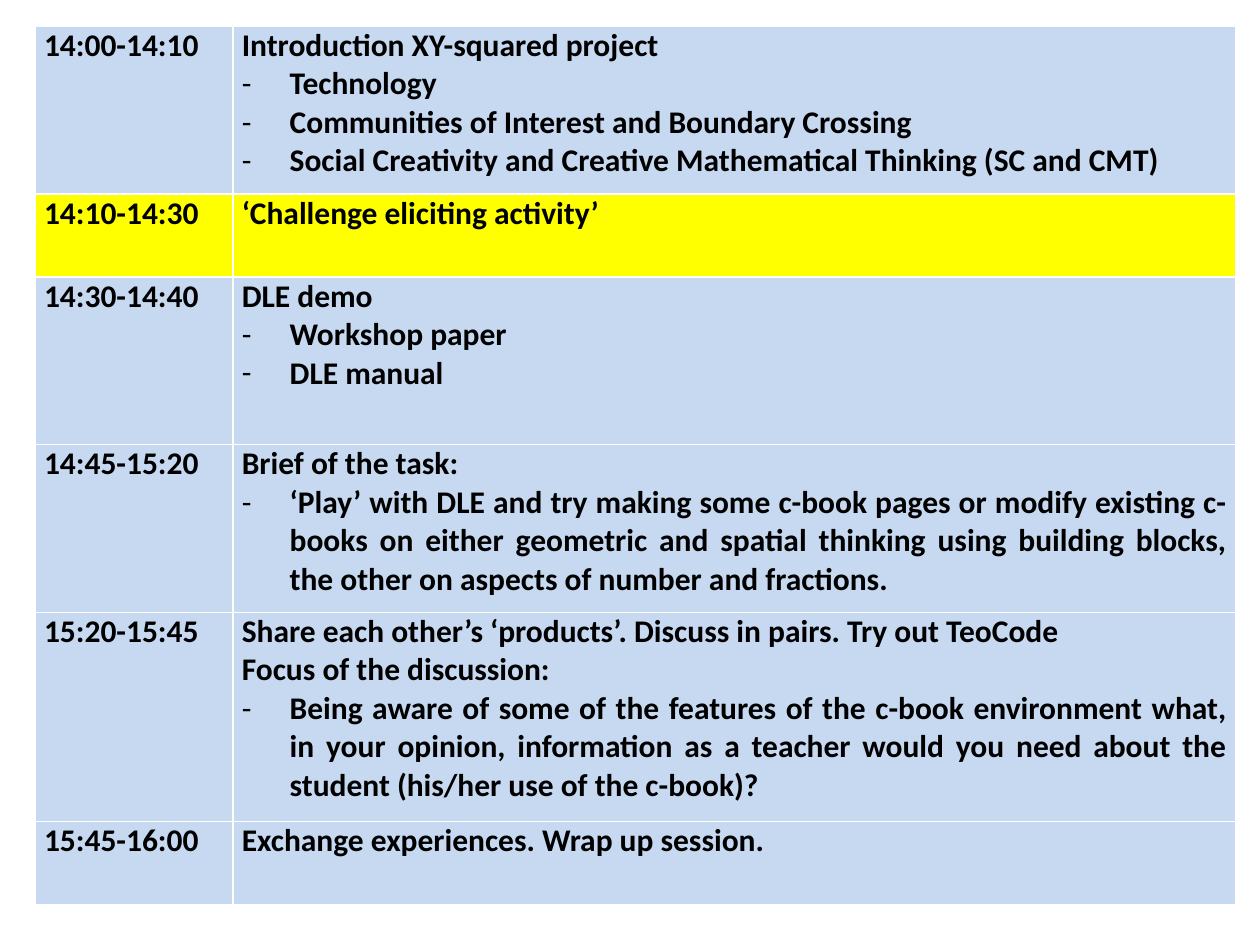
import pptx
import pptx.dml.color
import pptx.enum.text
import pptx.util
from lxml import etree
from pptx.oxml.ns import qn

Inches = pptx.util.Inches

BLUE, YELLOW, BLACK = "C6D9F1", "FFFF00", "000000"
COLUMN_WIDTHS = (1.57, 7.96)
INDENT = 0.38

# time, row height, fill, opening lines, bulleted lines
AGENDA = [
    ("14:00-14:10", 1.33, BLUE, ["Introduction XY-squared project"],
     ["Technology",
      "Communities of Interest and Boundary Crossing",
      "Social Creativity and Creative Mathematical Thinking (SC and CMT)"]),
    ("14:10-14:30", 0.66, YELLOW, ["‘Challenge eliciting activity’"], []),
    ("14:30-14:40", 1.33, BLUE, ["DLE demo"], ["Workshop paper", "DLE manual"]),
    ("14:45-15:20", 1.33, BLUE, ["Brief of the task:"],
     ["‘Play’ with DLE and try making some c-book pages or modify existing "
      "c-books on either geometric and spatial thinking using building blocks, "
      "the other on aspects of number and fractions."]),
    ("15:20-15:45", 1.66, BLUE,
     ["Share each other’s ‘products’. Discuss in pairs. Try out TeoCode",
      "Focus of the discussion:"],
     ["Being aware of some of the features of the c-book environment what, "
      "in your opinion, information as a teacher would you need about the "
      "student (his/her use of the c-book)?"]),
    ("15:45-16:00", 0.66, BLUE, ["Exchange experiences. Wrap up session."], []),
]


def color(hex_value):
    return pptx.dml.color.RGBColor.from_string(hex_value)


def add_dash(paragraph):
    """Give the paragraph a dash bullet with a hanging indent."""
    properties = paragraph._p.get_or_add_pPr()
    properties.set("marL", str(Inches(INDENT)))
    properties.set("indent", str(Inches(-INDENT)))
    etree.SubElement(properties, qn("a:buFont")).set("typeface", "Calibri")
    etree.SubElement(properties, qn("a:buChar")).set("char", "-")


def fill_cell(cell, fill, lines, bullets=()):
    cell.fill.solid()
    cell.fill.fore_color.rgb = color(fill)
    cell.margin_left = cell.margin_right = Inches(0.07)
    cell.margin_top = cell.margin_bottom = 0
    for index, text in enumerate([*lines, *bullets]):
        frame = cell.text_frame
        paragraph = frame.add_paragraph() if index else frame.paragraphs[0]
        paragraph.alignment = pptx.enum.text.PP_ALIGN.JUSTIFY
        if index >= len(lines):
            add_dash(paragraph)
        run = paragraph.add_run()
        run.text = text
        run.font.name = "Calibri"
        run.font.size = pptx.util.Pt(18)
        run.font.bold = True
        run.font.color.rgb = color(BLACK)


def main():
    presentation = pptx.Presentation()
    presentation.slide_width, presentation.slide_height = Inches(10), Inches(7.5)
    slide = presentation.slides.add_slide(presentation.slide_layouts[6])

    total_height = sum(row[1] for row in AGENDA)
    # The default table style draws the white rules, thicker under the first row.
    table = slide.shapes.add_table(
        len(AGENDA), len(COLUMN_WIDTHS), Inches(0.28), Inches(0.21),
        Inches(sum(COLUMN_WIDTHS)), Inches(total_height)).table
    table.horz_banding = False
    for column, width in zip(table.columns, COLUMN_WIDTHS):
        column.width = Inches(width)

    for index, (time, height, fill, lines, bullets) in enumerate(AGENDA):
        table.rows[index].height = Inches(height)
        fill_cell(table.cell(index, 0), fill, [time])
        fill_cell(table.cell(index, 1), fill, lines, bullets)

    presentation.save("out.pptx")


if __name__ == "__main__":
    main()
